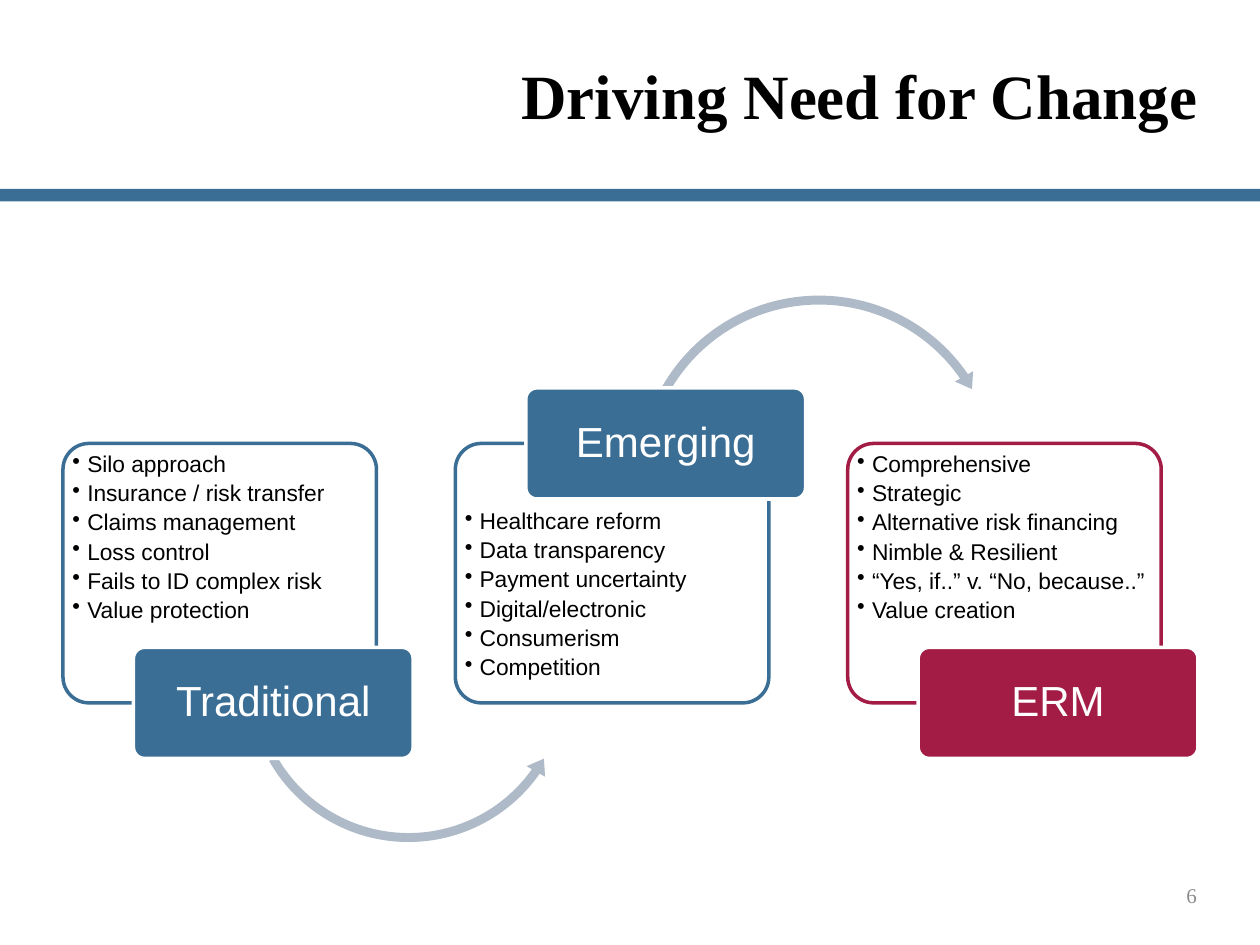
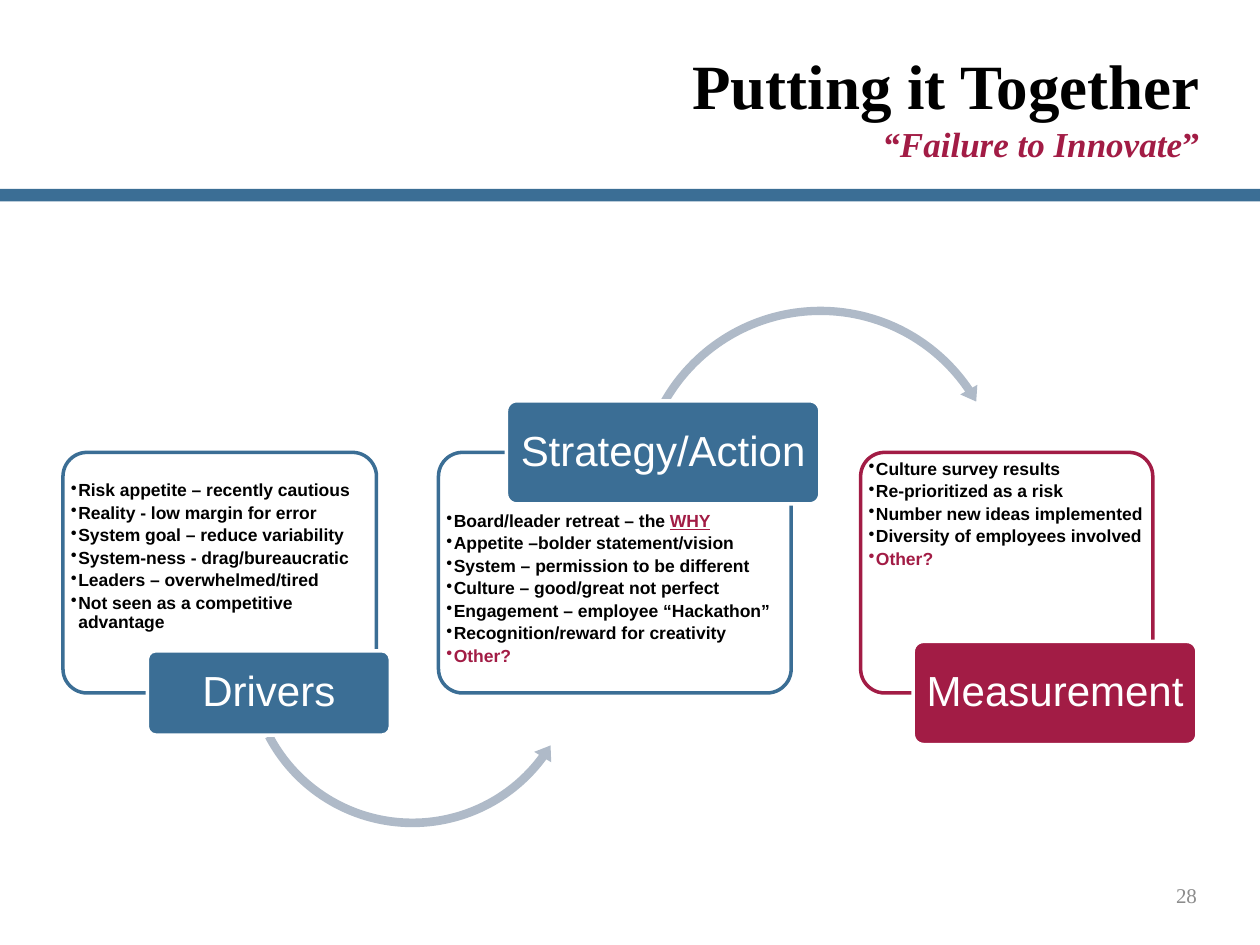
"""Build two slides that each lead through three linked steps."""
from pptx import Presentation
from pptx.dml.color import RGBColor
from pptx.enum.shapes import MSO_SHAPE
from pptx.enum.text import MSO_ANCHOR, PP_ALIGN
from pptx.oxml.ns import qn
from pptx.util import Cm, Pt
from lxml import etree

RECT, ROUND = MSO_SHAPE.RECTANGLE, MSO_SHAPE.ROUNDED_RECTANGLE
SWING, HOP = MSO_SHAPE.LEFT_CIRCULAR_ARROW, MSO_SHAPE.CIRCULAR_ARROW
TOP, MIDDLE = MSO_ANCHOR.TOP, MSO_ANCHOR.MIDDLE
LEFT, CENTER, RIGHT = PP_ALIGN.LEFT, PP_ALIGN.CENTER, PP_ALIGN.RIGHT

BLUE = RGBColor(0x3B, 0x6E, 0x95)
RED = RGBColor(0xA2, 0x1C, 0x45)
MIST = RGBColor(0xAF, 0xBA, 0xC8)
GRAY = RGBColor(0x8C, 0x8C, 0x8C)
BLACK = RGBColor(0, 0, 0)
WHITE = RGBColor(255, 255, 255)
SERIF, SANS = "Times New Roman", "Arial"
EDGE = 0.11

HEAD = dict(size=36, bold=True, color=BLACK)
SUB = dict(size=20, bold=True, color=RED)
OTHER = [("Other?", dict(color=RED))]

SLIDES = [
    dict(
        page="6", title=[[("Driving Need for Change", HEAD)]],
        box=(6.1, 0.64, 18.29, 2.54),
        top=8.94, high=5.23, deep=3.86, size=13, bold=False, hang=0.3, pad=0.08,
        steps=[
            dict(name="Traditional", color=BLUE, x=1.27, wide=6.32, tag=(5.64, 2.24), over=0.74,
                 arrow=(SWING, 4.88, 10.39, 6.71, (2.7, 333.1, 2108.6, 9024.5, 3.2)),
                 items=["Silo approach", "Insurance / risk transfer", "Claims management",
                        "Loss control", "Fails to ID complex risk", "Value protection"]),
            dict(name="Emerging", color=BLUE, x=9.18, wide=6.32, tag=(5.64, 2.24), over=0.74,
                 arrow=(HOP, 12.75, 5.84, 7.52, (2.4, 295.2, 19529.3, 12575.5, 2.8)),
                 items=["Healthcare reform", "Data transparency", "Payment uncertainty",
                        "Digital/electronic", "Consumerism", "Competition"]),
            dict(name="ERM", color=RED, x=17.09, wide=6.32, tag=(5.64, 2.24), over=0.74,
                 items=["Comprehensive", "Strategic", "Alternative risk financing",
                        "Nimble & Resilient", "“Yes, if..” v. “No, because..”",
                        "Value creation"]),
        ]),
    dict(
        page="28",
        title=[[("Putting it Together", HEAD)],
               [("“Failure to Innovate", dict(SUB, italic=True)), ("”", SUB)]],
        box=(6.15, 0.64, 18.29, 2.97),
        top=9.12, high=4.85, deep=3.58, size=10, bold=True, hang=0.15, pad=0.05,
        steps=[
            dict(name="Drivers", color=BLUE, x=1.27, wide=6.32, tag=(4.9, 1.7), over=0.28,
                 drop=0.43,
                 arrow=(SWING, 4.85, 9.86, 6.93, (2.5, 297.4, 2185.1, 9136.7, 2.9)),
                 items=["Risk appetite – recently cautious", "Reality - low margin for error",
                        "System goal – reduce variability", "System-ness - drag/bureaucratic",
                        "Leaders – overwhelmed/tired", "Not seen as a competitive advantage"]),
            dict(name="Strategy/Action", color=BLUE, x=8.84, wide=7.11, tag=(6.32, 2.08), over=0.58,
                 arrow=(HOP, 12.73, 6.07, 7.62, (2.2, 269.4, 19555.1, 12575.5, 2.6)),
                 items=[[("Board/leader retreat – the ", {}),
                         ("WHY", dict(color=RED, underline=True))],
                        "Appetite –bolder statement/vision",
                        "System – permission to be different",
                        "Culture – good/great not perfect",
                        "Engagement – employee “Hackathon”",
                        "Recognition/reward for creativity", OTHER]),
            dict(name="Measurement", color=RED, x=17.35, wide=5.89, tag=(5.72, 2.08), over=0.89,
                 items=["Culture survey results", "Re-prioritized as a risk",
                        "Number new ideas implemented", "Diversity of employees involved",
                        OTHER]),
        ]),
]


def add_run(para, text, face, size, color, bold=False, italic=False, underline=False):
    """Add one styled run."""
    run = para.add_run()
    run.text = text
    font = run.font
    font.name, font.size, font.color.rgb = face, Pt(size), color
    font.bold, font.italic, font.underline = bold, italic, underline


def set_frame(shape, anchor, side, edge, wrap=True):
    """Set anchor, margins and wrapping; return the text frame."""
    frame = shape.text_frame
    frame.word_wrap, frame.vertical_anchor = wrap, anchor
    frame.margin_left = frame.margin_right = Cm(side)
    frame.margin_top = frame.margin_bottom = Cm(edge)
    return frame


def add_box(slide, box, anchor, side, edge):
    """Add a text box and return its frame."""
    return set_frame(slide.shapes.add_textbox(*map(Cm, box)), anchor, side, edge)


def add_form(slide, kind, box, fill, line=None):
    """Add a flat preset shape."""
    form = slide.shapes.add_shape(kind, *map(Cm, box))
    form.shadow.inherit = False
    form.fill.solid()
    form.fill.fore_color.rgb = fill
    if line is None:
        form.line.fill.background()
    else:
        form.line.color.rgb, form.line.width = line, Pt(2)
    return form


def add_list(slide, box, items, plan):
    """Add the bulleted points of a card."""
    frame = add_box(slide, box, TOP, plan["pad"], plan["pad"])
    for i, item in enumerate(items):
        para = frame.add_paragraph() if i else frame.paragraphs[0]
        props = para._p.get_or_add_pPr()
        props.set("marL", str(Cm(plan["hang"])))
        props.set("indent", str(-Cm(plan["hang"])))
        etree.SubElement(props, qn("a:buChar")).set("char", "•")
        para.alignment, para.line_spacing = LEFT, 0.9
        para.space_after = Pt(plan["size"] * 0.2)
        base = dict(face=SANS, size=plan["size"], color=BLACK, bold=plan["bold"])
        for text, style in [(item, {})] if isinstance(item, str) else item:
            add_run(para, text, **{**base, **style})


def add_step(slide, plan, step, raised):
    """Add a card with its points, arrow and name tag."""
    x, wide, top, high = step["x"], step["wide"], plan["top"], plan["high"]
    add_form(slide, ROUND, (x, top, wide, high), WHITE, step["color"]).adjustments[0] = 0.1
    start = top + high - EDGE - plan["deep"] if raised else top + EDGE + step.get("drop", 0)
    add_list(slide, (x + EDGE, start, wide - 2 * EDGE, plan["deep"]), step["items"], plan)
    if "arrow" in step:
        kind, left, upper, size, bends = step["arrow"]
        arrow = add_form(slide, kind, (left, upper, size, size), MIST)
        for i, bend in enumerate(bends):
            arrow.adjustments[i] = bend / 100
    width, height = step["tag"]
    axis = top if raised else top + high
    spot = (x + wide + step["over"] - width, axis - height / 2, width, height)
    tag = add_form(slide, ROUND, spot, step["color"], WHITE)
    tag.adjustments[0] = 0.1
    para = set_frame(tag, MIDDLE, 0.13, 0.08, wrap=False).paragraphs[0]
    para.alignment, para.line_spacing = CENTER, 0.9
    add_run(para, step["name"], SANS, 24, WHITE)


def add_base(slide, plan):
    """Add the band, title and page number."""
    add_form(slide, RECT, (0, 3.81, 25.4, 0.25), BLUE)
    para = add_box(slide, plan["box"], MIDDLE, 0.25, 0.13).paragraphs[0]
    para.alignment = RIGHT
    for i, line in enumerate(plan["title"]):
        if i:
            para.add_line_break()
        for text, style in line:
            add_run(para, text, SERIF, **style)
    para = add_box(slide, (21.84, 17.53, 2.54, 1.02), MIDDLE, 0.25, 0.13).paragraphs[0]
    para.alignment = RIGHT
    add_run(para, plan["page"], SERIF, 12, GRAY)


def main():
    """Build and save the deck."""
    deck = Presentation()
    deck.slide_width, deck.slide_height = Cm(25.4), Cm(19.05)
    for plan in SLIDES:
        slide = deck.slides.add_slide(deck.slide_layouts[6])
        add_base(slide, plan)
        for i, step in enumerate(plan["steps"]):
            add_step(slide, plan, step, raised=i % 2 == 1)
    deck.save("out.pptx")


if __name__ == "__main__":
    main()
